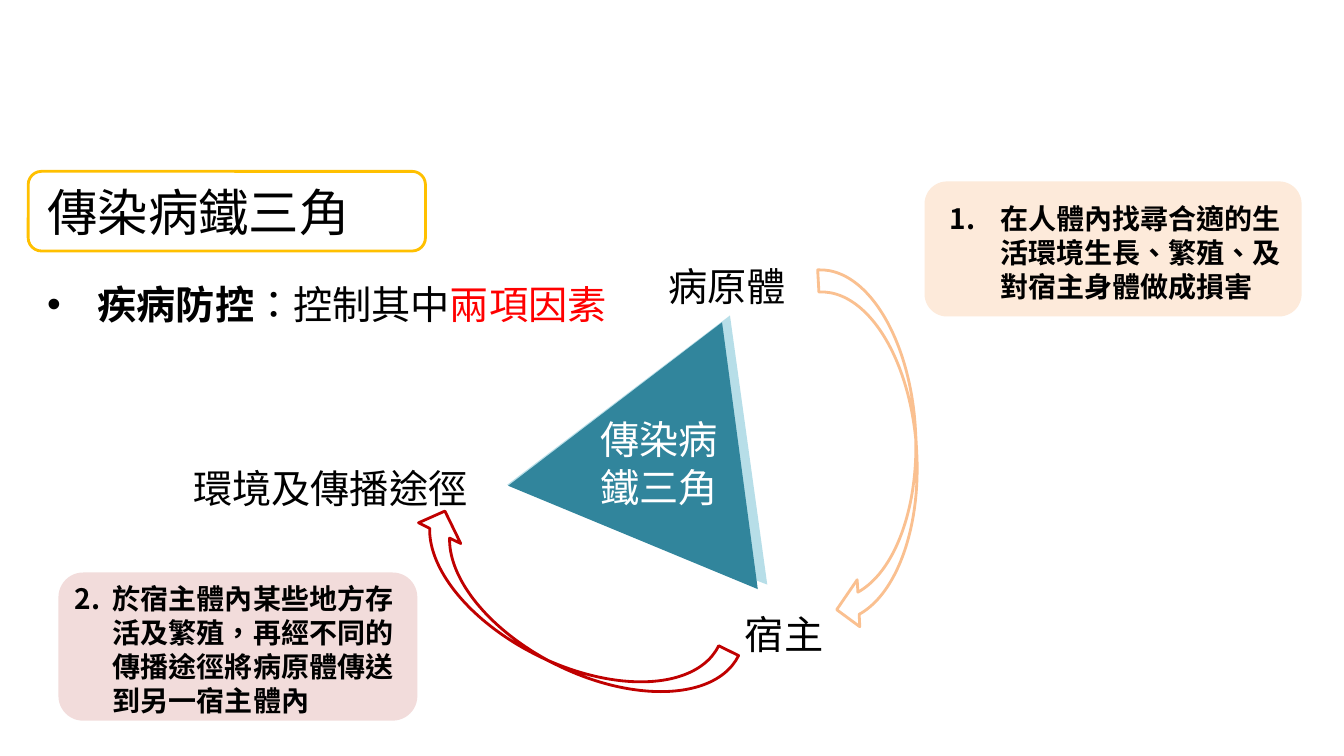
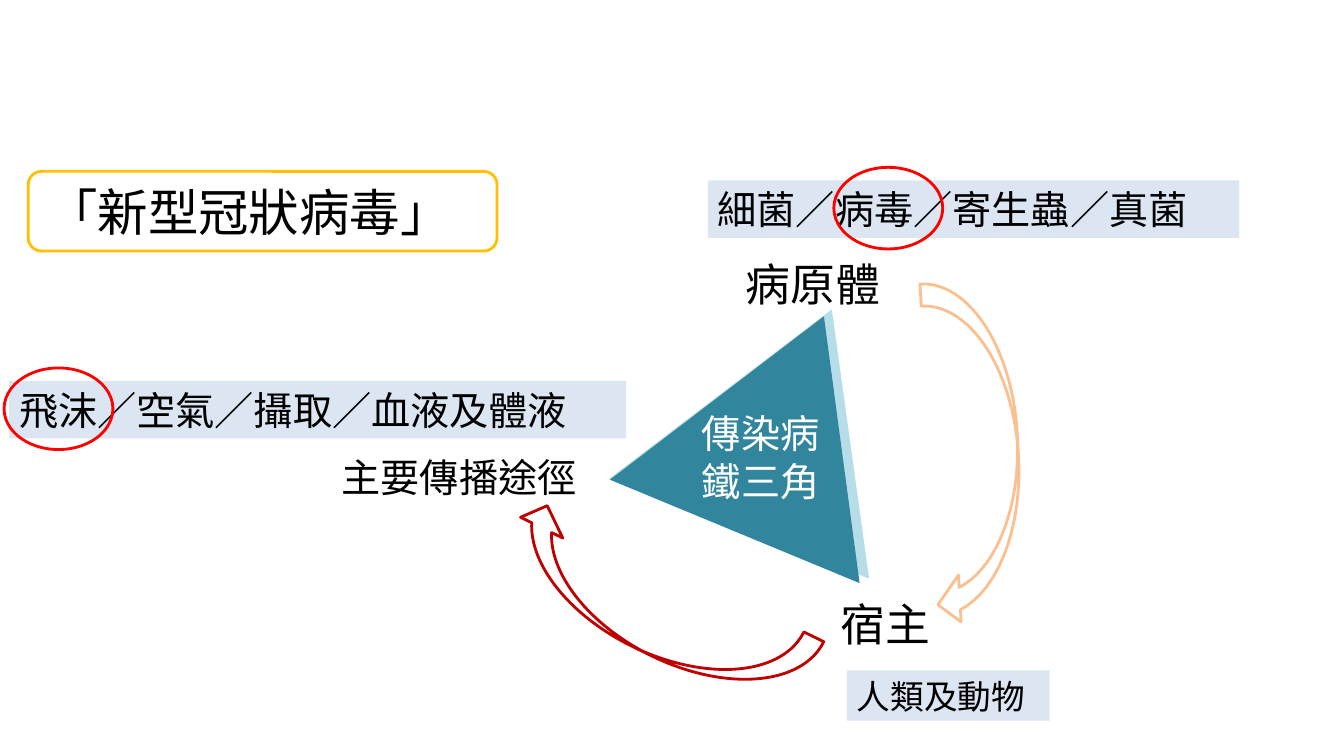
"""Build two slides on the triangle of infectious disease."""
from dataclasses import dataclass
from typing import NamedTuple

from lxml import etree
from pptx import Presentation
from pptx import util as u
from pptx.dml.color import RGBColor
from pptx.enum import shapes, text
from pptx.oxml.ns import qn

COLUMNS, ROWS = 13.33, 7.5
CELL = u.Inches(1)
LINE_PITCH = 1.21
ROUND_FONT, PLAIN_FONT = "Comic Neue", "Noto Sans CJK SC"
BLACK, WHITE, RED = "000000", "FFFFFF", "FF0000"
GOLD, ORANGE, CRIMSON = "FFC000", "FAC090", "C00000"
TEAL, PALE_TEAL = "31859C", "B7DEE8"
PALE_BLUE, PALE_ORANGE, PALE_ROSE = "DCE6F2", "FDEADA", "F2DCDB"
KIND = shapes.MSO_SHAPE


class Box(NamedTuple):
    """Place and size in grid cells, with a turn in degrees."""
    col: float
    row: float
    cols: float
    rows: float
    turn: float = 0

    def shifted(self, cols: float, rows: float) -> "Box":
        """Return the box moved by whole or part cells."""
        return self._replace(col=self.col + cols, row=self.row + rows)


class Part(NamedTuple):
    """A stretch of wording with its own colour and weight."""
    words: str
    colour: str = BLACK
    bold: bool = False


@dataclass(frozen=True)
class Caption:
    """A text box: one tuple of parts for each paragraph."""
    box: Box
    paragraphs: tuple[tuple[Part, ...], ...]
    size: float = 28
    font: str = ROUND_FONT
    fill: str | None = None
    centred: bool = False
    hanging: float = 0
    number: int | None = None


@dataclass(frozen=True)
class Panel:
    """A preset shape with a fill, an outline or both."""
    kind: shapes.MSO_SHAPE
    box: Box
    fill: str | None = None
    outline: str | None = None
    adjustments: tuple[float, ...] = ()


def grid(cells: float) -> int:
    """Convert grid cells to EMU."""
    return round(cells * CELL)


def rgb(value: str) -> RGBColor:
    """Convert a hex string to a colour."""
    return RGBColor.from_string(value)


def paint(shape, fill: str | None, outline: str | None = None) -> None:
    """Set fill and outline and drop the shadow."""
    shape.shadow.inherit = False
    if fill:
        shape.fill.solid()
        shape.fill.fore_color.rgb = rgb(fill)
    else:
        shape.fill.background()
    if outline:
        shape.line.color.rgb = rgb(outline)
        shape.line.width = u.Pt(2)
    else:
        shape.line.fill.background()


def draw_panel(slide, panel: Panel) -> None:
    """Draw a preset shape."""
    box = panel.box
    shape = slide.shapes.add_shape(panel.kind, *map(grid, box[:4]))
    shape.rotation = box.turn
    for index, value in enumerate(panel.adjustments):
        shape.adjustments[index] = value
    paint(shape, panel.fill, panel.outline)


def add_marker(paragraph, hanging: float, number: int | None) -> None:
    """Give a paragraph a hanging bullet or number."""
    properties = paragraph._p.get_or_add_pPr()
    properties.set("marL", str(grid(hanging)))
    properties.set("indent", str(-grid(hanging)))
    if number is None:
        etree.SubElement(properties, qn("a:buFont"), typeface="Arial")
        etree.SubElement(properties, qn("a:buChar"), char="•")
    else:
        etree.SubElement(properties, qn("a:buAutoNum"),
                         type="arabicPeriod", startAt=str(number))


def add_part(paragraph, part: Part, size: float, font: str) -> None:
    """Add one formatted run of traditional Chinese."""
    run = paragraph.add_run()
    run.text = part.words
    run.font.size = u.Pt(size)
    run.font.bold = part.bold
    run.font.color.rgb = rgb(part.colour)
    run.font.name = font
    properties = run._r.get_or_add_rPr()
    properties.set("lang", "zh-HK")
    latin = properties.find(qn("a:latin"))
    latin.addnext(etree.Element(qn("a:ea"), typeface=font))


def draw_caption(slide, caption: Caption) -> None:
    """Draw a text box with its paragraphs."""
    label = slide.shapes.add_textbox(*map(grid, caption.box[:4]))
    if caption.fill:
        paint(label, caption.fill)
    frame = label.text_frame
    frame.word_wrap = True
    for index, parts in enumerate(caption.paragraphs):
        paragraph = frame.add_paragraph() if index else frame.paragraphs[0]
        paragraph.line_spacing = u.Pt(caption.size * LINE_PITCH)
        if caption.centred:
            paragraph.alignment = text.PP_ALIGN.CENTER
        if caption.hanging:
            add_marker(paragraph, caption.hanging, caption.number)
        for part in parts:
            add_part(paragraph, part, caption.size, caption.font)


def draw_all(slide, *items: Panel | Caption) -> None:
    """Draw panels and captions from back to front."""
    for item in items:
        if isinstance(item, Panel):
            draw_panel(slide, item)
        else:
            draw_caption(slide, item)


def line(col: float, row: float, cols: float, rows: float, words: str,
         size: float = 28, fill: str | None = None) -> Caption:
    """Return a caption of one plain line."""
    return Caption(Box(col, row, cols, rows), ((Part(words),),), size, fill=fill)


def advice(box: Box, hanging: float, number: int, words: str) -> Caption:
    """Return a numbered bold remark."""
    return Caption(box, ((Part(words, bold=True),),), 20, PLAIN_FONT,
                   hanging=hanging, number=number)


def arrow(box: Box, colour: str) -> Panel:
    """Return a curved arrow between two corners of the triangle."""
    return Panel(KIND.CURVED_LEFT_ARROW, box, outline=colour,
                 adjustments=(0.25, 0.53, 0.25))


def ring(col: float, row: float) -> Panel:
    """Return a red ring around a key word."""
    return Panel(KIND.OVAL, Box(col, row, 1.08, 0.81), outline=RED)


def draw_title(slide, words: str, cols: float) -> None:
    """Draw the title in its gold frame."""
    draw_all(slide, line(0.37, 1.74, cols - 0.1, 0.71, words, 36),
             Panel(KIND.ROUNDED_RECTANGLE, Box(0.28, 1.7, cols, 0.79), outline=GOLD))


def draw_triangle(slide, cols: float = 0, rows: float = 0) -> None:
    """Draw the named triangle over its pale back face."""
    corners = [(grid(x + cols), grid(y + rows))
               for x, y in ((5.03, 4.81), (7.24, 3.13), (7.61, 5.8))]
    outline = slide.shapes.build_freeform(*corners[0])
    outline.add_line_segments(corners[1:], close=True)
    paint(outline.convert_to_shape(), PALE_TEAL)
    name = tuple((Part(words, WHITE),) for words in ("傳染病", "鐵三角"))
    draw_all(slide,
             Panel(KIND.ISOSCELES_TRIANGLE,
                   Box(5.38, 3.11, 2.68, 2.31, 22.5).shifted(cols, rows), TEAL),
             Caption(Box(5.8, 4.07, 1.47, 1.04).shifted(cols, rows), name, centred=True))


def draw_control(slide) -> None:
    """Draw the slide on controlling disease."""
    draw_all(slide,
             Panel(KIND.ROUNDED_RECTANGLE, Box(0.58, 5.68, 3.56, 1.47), PALE_ROSE),
             Panel(KIND.ROUNDED_RECTANGLE, Box(9.17, 1.8, 3.74, 1.34), PALE_ORANGE))
    draw_triangle(slide)
    rule = (Part("疾病防控", bold=True), Part("：控制其中"), Part("兩項因素", RED))
    draw_all(slide,
             line(6.53, 2.55, 1.47, 0.57, "病原體"),
             line(1.82, 4.55, 3.16, 0.57, "環境及傳播途徑"),
             line(7.29, 6, 1.05, 0.57, "宿主"),
             Caption(Box(0.37, 2.73, 5.9, 0.57), (rule,), font=PLAIN_FONT, hanging=0.5),
             arrow(Box(8.21, 2.65, 0.88, 3.61, 356.8), ORANGE),
             advice(Box(9.32, 1.95, 3.61, 1.11), 0.5, 1,
                    "在人體內找尋合適的生活環境生長、繁殖、及對宿主身體做成損害"),
             arrow(Box(5.13, 4.39, 0.88, 3.48, 116.2), CRIMSON),
             advice(Box(0.64, 5.72, 3.48, 1.45), 0.38, 2,
                    "於宿主體內某些地方存活及繁殖，再經不同的傳播途徑將病原體傳送到另一宿主體內"))
    draw_title(slide, "傳染病鐵三角", 3.94)


def draw_coronavirus(slide) -> None:
    """Draw the slide on the new coronavirus."""
    draw_triangle(slide, 1.01, -0.06)
    draw_all(slide,
             line(7.3, 2.49, 1.65, 0.64, "病原體", 32),
             line(3.29, 4.44, 2.74, 0.57, "主要傳播途徑"),
             line(8.24, 5.87, 1.17, 0.64, "宿主", 32),
             arrow(Box(9.22, 2.79, 0.88, 3.42, 356.8), ORANGE),
             arrow(Box(6.06, 4.39, 0.88, 3.29, 116.2), CRIMSON))
    draw_title(slide, "「新型冠狀病毒」", 4.65)
    draw_all(slide,
             line(7.02, 1.79, 5.27, 0.57, "細菌／病毒／寄生蟲／真菌", fill=PALE_BLUE),
             ring(8.27, 1.66),
             line(8.4, 6.65, 2.01, 0.5, "人類及動物", 24, PALE_BLUE),
             line(0.09, 3.78, 6.12, 0.57, "飛沫／空氣／攝取／血液及體液", fill=PALE_BLUE),
             ring(0.04, 3.65))


def main() -> None:
    """Build and save the presentation."""
    deck = Presentation()
    deck.slide_width, deck.slide_height = grid(COLUMNS), grid(ROWS)
    for draw in (draw_control, draw_coronavirus):
        draw(deck.slides.add_slide(deck.slide_layouts[6]))
    deck.save("out.pptx")


if __name__ == "__main__":
    main()
